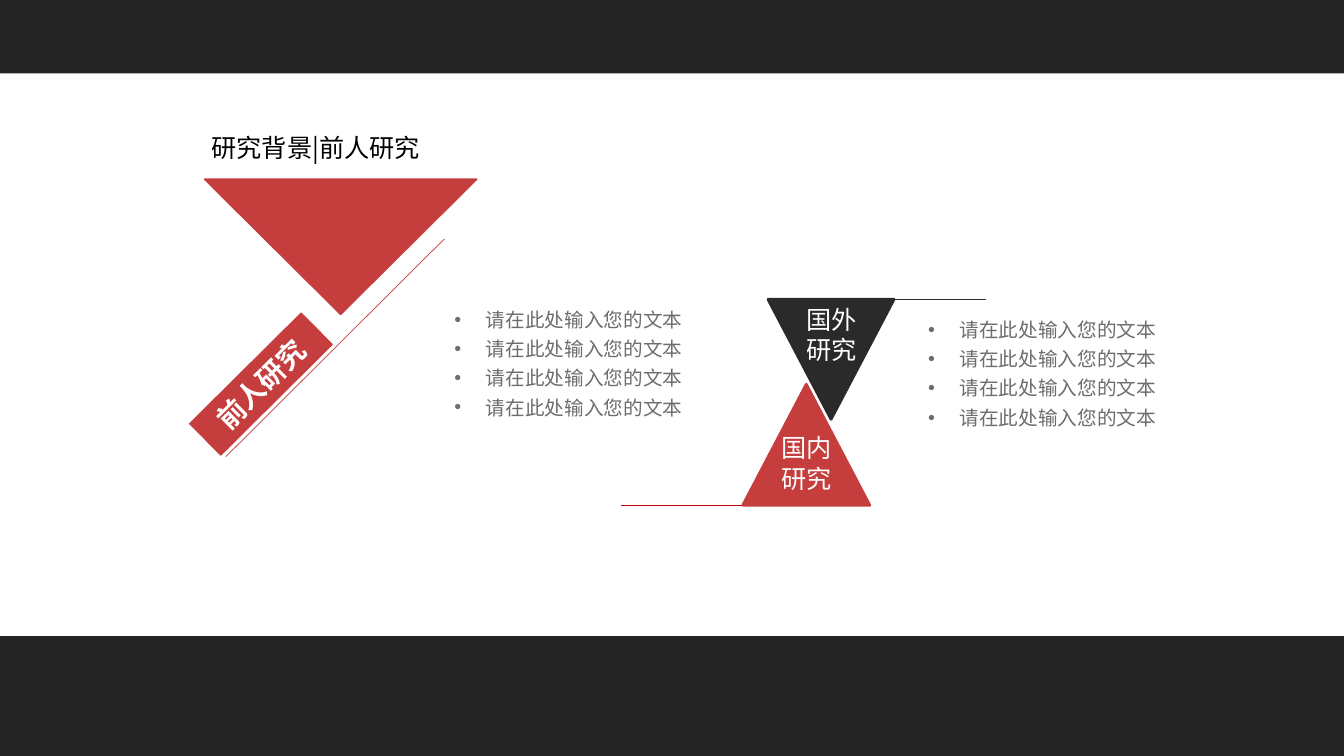
"""Build the slide on earlier research: a red title emblem, two triangles and two bullet lists."""
from pptx import Presentation
from pptx.dml.color import RGBColor
from pptx.enum.shapes import MSO_CONNECTOR, MSO_SHAPE
from pptx.enum.text import MSO_ANCHOR, MSO_AUTO_SIZE, PP_ALIGN
from pptx.oxml.ns import qn
from pptx.util import Pt
from lxml import etree

RECTANGLE, TRIANGLE = MSO_SHAPE.RECTANGLE, MSO_SHAPE.ISOSCELES_TRIANGLE
STRAIGHT = MSO_CONNECTOR.STRAIGHT
TOP, MIDDLE, BOTTOM = MSO_ANCHOR.TOP, MSO_ANCHOR.MIDDLE, MSO_ANCHOR.BOTTOM
LEFT, CENTER, JUSTIFY = PP_ALIGN.LEFT, PP_ALIGN.CENTER, PP_ALIGN.JUSTIFY
GROW = MSO_AUTO_SIZE.SHAPE_TO_FIT_TEXT

BAND = RGBColor(0x24, 0x24, 0x24)
RED = RGBColor(0xC5, 0x3D, 0x3D)
DEEP_RED = RGBColor(0xC0, 0x00, 0x00)
CHARCOAL = RGBColor(0x2B, 0x2A, 0x2A)
GREY = RGBColor(0x6D, 0x6D, 0x6D)
WHITE = RGBColor(0xFF, 0xFF, 0xFF)
BLACK = RGBColor(0x00, 0x00, 0x00)

HEADING_FONT, BODY_FONT = "Noto Sans CJK JP", "Noto Sans CJK SC"
WIDTH, HEIGHT = 960, 540
INDENT, LIST_SPACING = 22.5, 1.24

TITLE = "研究背景|前人研究"
LABEL = "前人研究"
ABROAD, DOMESTIC = "国外研究", "国内研究"
BULLETS = ["请在此处输入您的文本"] * 4

BANDS = [(0, 0, WIDTH, 52.4), (0, 454.4, WIDTH, HEIGHT - 454.4)]
EMBLEM = [(146, 128), (340.6, 128), (243.3, 224.6)]
EMBLEM_LINE = (317.5, 170.6, 161.3, 326.2)
LABEL_BOX = (130.3, 258.5, 112.3, 31.7)
TITLE_BOX = (144, 90.7, 530, 29)
ABROAD_TRIANGLE = (548.6, 213.8, 90, 85.7)
ABROAD_BOX = (568.8, 213.8, 52.6, 51)
ABROAD_LINE = (638.6, 213.8, 704.5, 213.8)
DOMESTIC_TRIANGLE = (530.6, 274.5, 90.7, 86.4)
DOMESTIC_LINE = (530.6, 360.9, 443.5, 360.9)
LIST_BOXES = [(317.5, 212.4, 193, 80), (655.9, 219.6, 193, 80)]


def points(values):
    return [Pt(value) for value in values]


def paint(shape, fill, line_width=0):
    shape.shadow.inherit = False
    shape.fill.solid()
    shape.fill.fore_color.rgb = fill
    if line_width:
        shape.line.color.rgb = fill
        shape.line.width = Pt(line_width)
    else:
        shape.line.fill.background()


def add_figure(shapes, preset, box, fill, line_width=0, rotation=0):
    shape = shapes.add_shape(preset, *points(box))
    paint(shape, fill, line_width)
    shape.rotation = rotation
    return shape


def add_rule(shapes, ends, color):
    rule = shapes.add_connector(STRAIGHT, *points(ends))
    rule.line.color.rgb = color
    rule.line.width = Pt(0.5)
    etree.SubElement(rule._element.spPr, qn("a:effectLst"))


def write(shape, lines, size, font, color, align=LEFT, anchor=TOP, bold=False, bulleted=False):
    frame = shape.text_frame
    frame.word_wrap = True
    frame.vertical_anchor = anchor
    frame.text = "\n".join(lines)
    for paragraph in frame.paragraphs:
        paragraph.alignment = align
        paragraph.font.size = Pt(size)
        paragraph.font.bold = bold
        paragraph.font.color.rgb = color
        paragraph.font.name = font
        properties = paragraph._p.get_or_add_pPr()
        defaults = properties.find(qn("a:defRPr"))
        etree.SubElement(defaults, qn("a:ea"), typeface=font)
        if bulleted:
            paragraph.line_spacing = LIST_SPACING
            properties.set("marL", str(Pt(INDENT)))
            properties.set("indent", str(-Pt(INDENT)))
            defaults.addprevious(etree.Element(qn("a:buFont"), typeface="Arial"))
            defaults.addprevious(etree.Element(qn("a:buChar"), char="•"))
    return frame


def add_emblem(page):
    shapes = page.shapes.add_group_shape().shapes
    add_rule(shapes, EMBLEM_LINE, RED)
    start, *corners = [tuple(points(corner)) for corner in EMBLEM]
    outline = shapes.build_freeform(*start)
    outline.add_line_segments(corners, close=True)
    paint(outline.convert_to_shape(), RED, 1)
    label = add_figure(shapes, RECTANGLE, LABEL_BOX, RED, 0.75, 315.2)
    write(label, [LABEL], 20, HEADING_FONT, WHITE, CENTER, MIDDLE, bold=True)


def add_triangles(page):
    shapes = page.shapes
    add_figure(shapes, TRIANGLE, ABROAD_TRIANGLE, CHARCOAL, 2, 180)
    add_rule(shapes, ABROAD_LINE, CHARCOAL)
    add_rule(shapes, DOMESTIC_LINE, DEEP_RED)
    domestic = add_figure(shapes, TRIANGLE, DOMESTIC_TRIANGLE, RED, 2)
    frame = write(domestic, [DOMESTIC], 18, BODY_FONT, WHITE, CENTER, BOTTOM)
    frame.margin_left = frame.margin_right = frame.margin_top = 0
    frame.margin_bottom = Pt(8.6)
    abroad = shapes.add_textbox(*points(ABROAD_BOX))
    write(abroad, [ABROAD], 18, BODY_FONT, WHITE).auto_size = GROW


def main():
    deck = Presentation()
    deck.slide_width, deck.slide_height = points((WIDTH, HEIGHT))
    page = deck.slides.add_slide(deck.slide_layouts[6])
    for band in BANDS:
        add_figure(page.shapes, RECTANGLE, band, BAND)
    add_emblem(page)
    title = page.shapes.add_textbox(*points(TITLE_BOX))
    write(title, [TITLE], 18, HEADING_FONT, BLACK).auto_size = GROW
    add_triangles(page)
    for box in LIST_BOXES:
        bullets = page.shapes.add_textbox(*points(box))
        write(bullets, BULLETS, 14, BODY_FONT, GREY, JUSTIFY, bulleted=True)
    deck.save("out.pptx")


if __name__ == "__main__":
    main()
